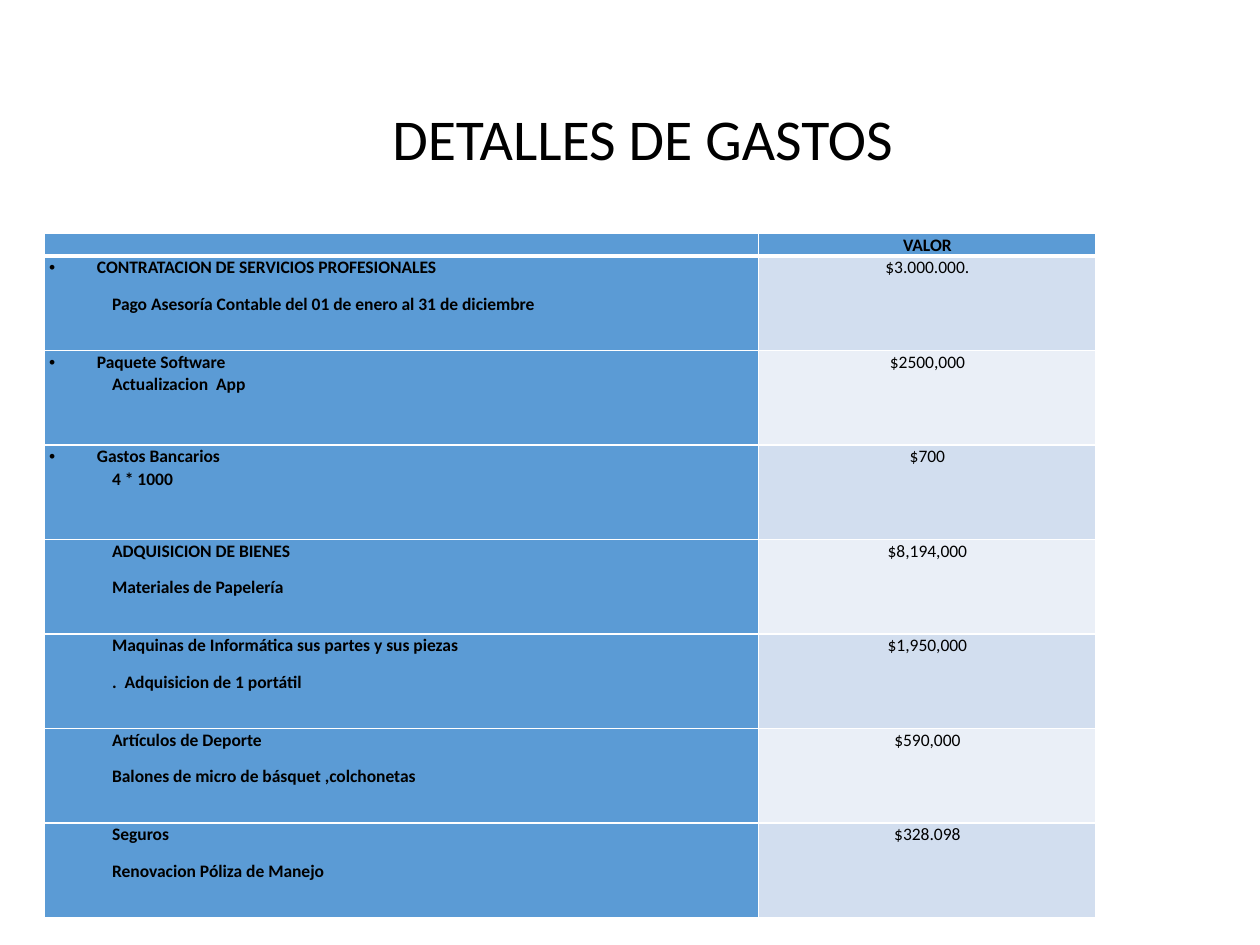
from lxml.etree import SubElement
from pptx import Presentation
from pptx.dml.color import RGBColor
from pptx.enum.text import MSO_ANCHOR, PP_ALIGN as Align
from pptx.oxml.ns import qn
from pptx.util import Inches, Pt

COLORS = {"text": "000000", "line": "FFFFFF", "main": "5B9BD5",
          "band_dark": "D2DEEF", "band_light": "EAEFF7"}
FONT = "Calibri"
TEXT_SIZE = 10
COLUMNS = (5.67, 2.68)
HEADER_HEIGHT, ROW_HEIGHT = 0.18, 0.75
BULLET_INDENT, PLAIN_INDENT = 0.38, 0.5

# Heading, detail, amount, heading has a bullet, points after the heading
EXPENSES = [
    ("CONTRATACION DE SERVICIOS PROFESIONALES",
     "Pago Asesoría Contable del 01 de enero al 31 de diciembre", "$3.000.000.", True, 8),
    ("Paquete Software", "Actualizacion  App", "$2500,000", True, 0),
    ("Gastos Bancarios", "4 * 1000", "$700", True, 0),
    ("ADQUISICION DE BIENES", "Materiales de Papelería", "$8,194,000", False, 8),
    ("Maquinas de Informática sus partes y sus piezas",
     ".  Adquisicion de 1 portátil", "$1,950,000", False, 8),
    ("Artículos de Deporte", "Balones de micro de básquet ,colchonetas", "$590,000", False, 8),
    ("Seguros", "Renovacion Póliza de Manejo", "$328.098", False, 8),
]


def color(name):
    return RGBColor.from_string(COLORS[name])


def format_font(font, size, bold=False):
    font.name, font.size, font.bold = FONT, Pt(size), bold
    font.color.rgb = color("text")


def indent(para, left, first=0):
    props = para._p.get_or_add_pPr()
    props.set("marL", str(Inches(left)))
    props.set("indent", str(Inches(first)))
    return props


def add_bullet(para):
    props = indent(para, BULLET_INDENT, -BULLET_INDENT)
    SubElement(props, qn("a:buFont"), typeface="Arial")
    SubElement(props, qn("a:buChar"), char="•")


def write_para(para, text, align, bold, after=8):
    para.text = text
    para.alignment = align
    para.line_spacing, para.space_after = 1.07, Pt(after)
    format_font(para.runs[0].font, TEXT_SIZE, bold)


def style_cell(cell, fill, top=1, bottom=1):
    """Set margins, fill and borders; top and bottom are line widths in points."""
    cell.margin_left = cell.margin_right = Inches(0.04)
    cell.margin_top = cell.margin_bottom = 0
    props = cell._tc.get_or_add_tcPr()
    for side, width in (("L", 1), ("R", 1), ("T", top), ("B", bottom)):
        line = SubElement(props, qn(f"a:ln{side}"), w=str(Pt(width)))
        solid = SubElement(line, qn("a:solidFill"))
        SubElement(solid, qn("a:srgbClr"), val=COLORS["line"])
    cell.fill.solid()
    cell.fill.fore_color.rgb = color(fill)


def fill_header(cells):
    for cell in cells:
        style_cell(cell, "main", bottom=3)
    blank, value = cells
    SubElement(blank.text_frame.paragraphs[0]._p, qn("a:endParaRPr"),
               sz=str(TEXT_SIZE * 100))
    write_para(value.text_frame.paragraphs[0], "VALOR", Align.CENTER, True)


def fill_expense(cells, number, expense):
    heading, detail, amount, bulleted, after = expense
    concept, value = cells
    top = 3 if number == 0 else 1
    style_cell(concept, "main", top)
    style_cell(value, "band_light" if number % 2 else "band_dark", top)

    first = concept.text_frame.paragraphs[0]
    second = concept.text_frame.add_paragraph()
    write_para(first, heading, Align.JUSTIFY, True, after)
    write_para(second, detail, Align.JUSTIFY, True)
    if bulleted:
        add_bullet(first)
    else:
        indent(first, PLAIN_INDENT)
    indent(second, PLAIN_INDENT)
    write_para(value.text_frame.paragraphs[0], amount, Align.CENTER, False)


def place_title(page, left, top, width, height):
    title = page.shapes.title
    title.left, title.top = Inches(left), Inches(top)
    title.width, title.height = Inches(width), Inches(height)
    title.text_frame.text = "DETALLES DE GASTOS"
    title.text_frame.vertical_anchor = MSO_ANCHOR.MIDDLE
    para = title.text_frame.paragraphs[0]
    para.alignment, para.line_spacing = Align.CENTER, 0.9
    indent(para, 0.2)
    format_font(para.runs[0].font, 33)


def place_expenses(page, left, top):
    heights = [HEADER_HEIGHT] + [ROW_HEIGHT] * len(EXPENSES)
    table = page.shapes.add_table(
        len(heights), len(COLUMNS), Inches(left), Inches(top),
        Inches(sum(COLUMNS)), Inches(sum(heights))).table
    for column, width in zip(table.columns, COLUMNS):
        column.width = Inches(width)
    for row, height in zip(table.rows, heights):
        row.height = Inches(height)
    header, *body = [list(row.cells) for row in table.rows]
    fill_header(header)
    for number, (cells, expense) in enumerate(zip(body, EXPENSES)):
        fill_expense(cells, number, expense)


def main():
    deck = Presentation()
    deck.slide_width, deck.slide_height = Inches(10), Inches(7.5)
    page = deck.slides.add_slide(deck.slide_layouts[5])
    place_title(page, 0.69, 0.4, 8.62, 1.45)
    place_expenses(page, 0.35, 1.85)
    deck.save("out.pptx")


if __name__ == "__main__":
    main()
